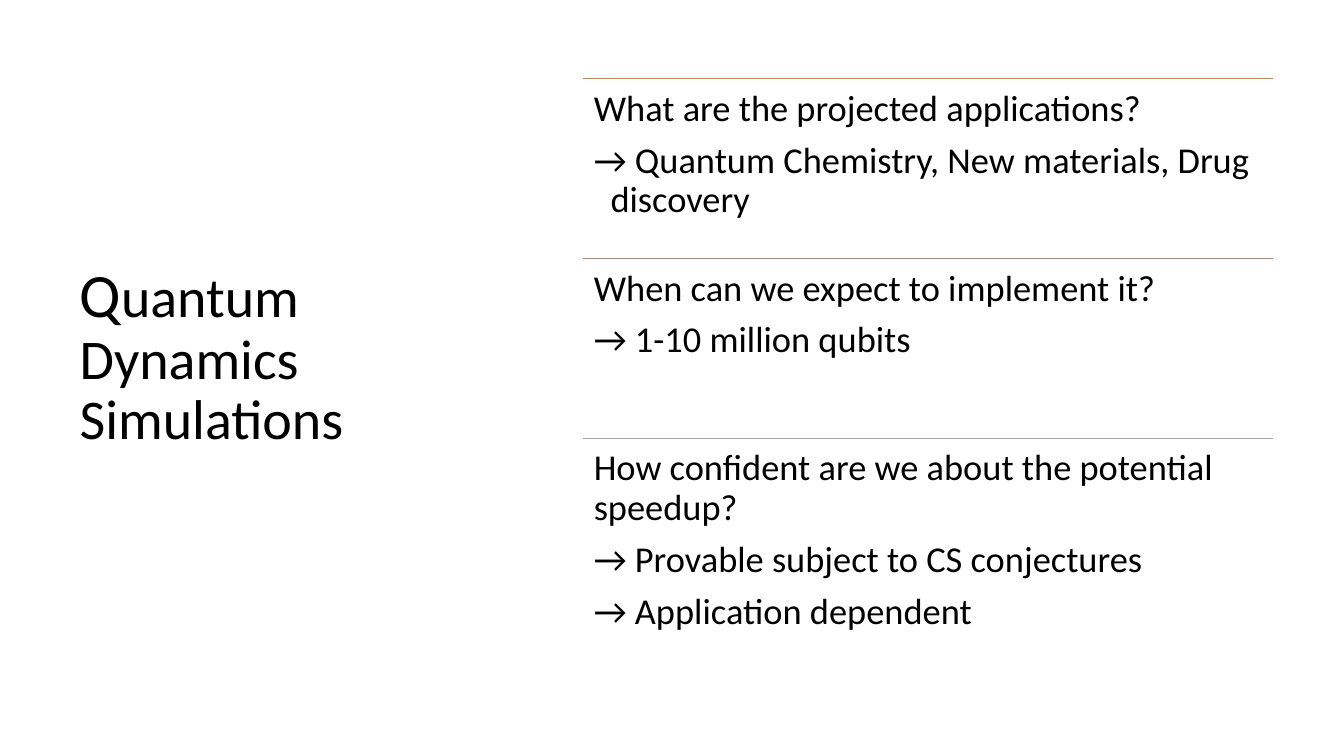
"""Builds the Quantum Dynamics Simulations slide."""
from lxml import etree
from pptx import Presentation
from pptx.dml.color import RGBColor
from pptx.enum import shapes, text
from pptx.oxml.ns import qn
from pptx.util import Pt

FONT = "Calibri"
COLORS = {"text": "000000", "first": "ED7D31", "second": "C48170", "third": "A5A5A5"}
LEFT, TOP, WIDTH, PITCH = 416.2, 56.2, 493.2, 128.5
INSET, HANG = 7.9, 12

SECTIONS = [
    ("first", "What are the projected applications?",
     ["Quantum Chemistry, New materials, Drug discovery"]),
    ("second", "When can we expect to implement it?", ["1-10 million qubits"]),
    ("third", "How confident are we about the potential speedup?",
     ["Provable subject to CS conjectures", "Application dependent"]),
]


def add_run(p, words, size):
    r = p.add_run()
    r.text = words
    r.font.name = FONT
    r.font.size = Pt(size)
    r.font.color.rgb = RGBColor.from_string(COLORS["text"])


def set_title(s):
    sp = s.shapes.title
    sp.left, sp.top, sp.width, sp.height = Pt(49.7), Pt(48.2), Pt(268.6), Pt(415.4)
    tf = sp.text_frame
    tf.word_wrap = True
    tf.auto_size = text.MSO_AUTO_SIZE.NONE
    tf.vertical_anchor = text.MSO_ANCHOR.MIDDLE
    p = tf.paragraphs[0]
    p.alignment = text.PP_ALIGN.LEFT
    p.line_spacing = 0.9
    add_run(p, "Q", 44)
    add_run(p, "uantum Dynamics Simulations", 40)


def add_rule(s, top, color):
    line = s.shapes.add_connector(
        shapes.MSO_CONNECTOR.STRAIGHT, Pt(LEFT), Pt(top), Pt(LEFT + WIDTH), Pt(top))
    line.line.color.rgb = RGBColor.from_string(COLORS[color])
    line.line.width = Pt(0.5)
    etree.SubElement(line._element.spPr, qn("a:effectLst"))


def add_section(s, top, question, answers):
    sp = s.shapes.add_textbox(Pt(LEFT), Pt(top), Pt(WIDTH), Pt(PITCH))
    tf = sp.text_frame
    tf.word_wrap = True
    tf.margin_left = tf.margin_right = tf.margin_top = tf.margin_bottom = Pt(INSET)
    for i, words in enumerate([question] + [f"→ {a}" for a in answers]):
        p = tf.add_paragraph() if i else tf.paragraphs[0]
        p.line_spacing = 0.9
        p.space_after = Pt(9)
        if i:
            pPr = p._p.get_or_add_pPr()
            pPr.set("marL", str(Pt(HANG)))
            pPr.set("indent", str(-Pt(HANG)))
        add_run(p, words, 26)


def main():
    prs = Presentation()
    prs.slide_width, prs.slide_height = Pt(960), Pt(540)
    s = prs.slides.add_slide(prs.slide_layouts[5])
    set_title(s)
    for i, (color, question, answers) in enumerate(SECTIONS):
        top = TOP + i * PITCH
        add_rule(s, top, color)
        add_section(s, top, question, answers)
    prs.save("out.pptx")


if __name__ == "__main__":
    main()
